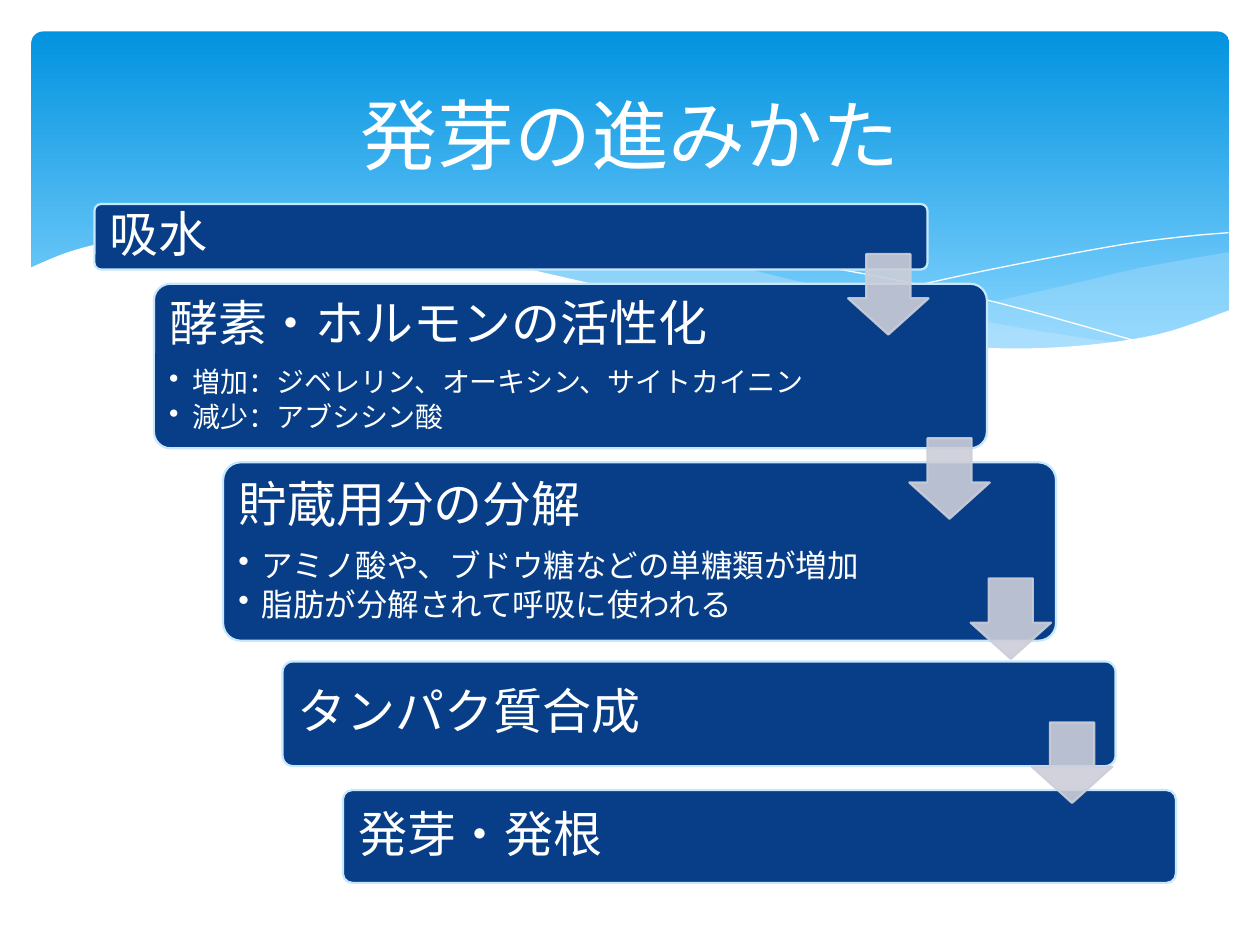
from pptx import Presentation
from pptx.dml.color import RGBColor
from pptx.enum.shapes import MSO_SHAPE as Kind
from pptx.enum.text import MSO_ANCHOR as Anchor, PP_ALIGN as Align
from pptx.oxml.ns import qn
from pptx.util import Pt
from lxml.etree import SubElement as Sub


def rgb(code):
    return RGBColor.from_string(code)


def curve(*knots, steps=6):
    """Points of a smooth line through the knots (Catmull-Rom)."""
    ends = [knots[0], *knots, knots[-1]]
    dots = []
    for a, b, c, d in zip(ends, ends[1:], ends[2:], ends[3:]):
        for n in range(steps):
            t = n / steps
            dots.append(tuple(
                q + t / 2 * (r - p + t * (2 * p - 5 * q + 4 * r - s
                                          + t * (3 * (q - r) + s - p)))
                for p, q, r, s in zip(a, b, c, d)))
    return dots + [knots[-1]]


class Deck:
    font, white, navy, pale, gray = "Calibri", "FFFFFF", "073E87", "C6E7FC", "CCCED9"
    sky = (("0293E0", 0), ("83D3FE", 0.9))
    inset = 8.64

    def __init__(self):
        self.prs = Presentation()
        self.prs.slide_width, self.prs.slide_height = Pt(720), Pt(540)
        self.slide = self.prs.slides.add_slide(self.prs.slide_layouts[5])
        self.shapes = self.slide.shapes

    def paint(self, fill, color, alpha=100):
        fill.solid()
        fill.fore_color.rgb = rgb(color)
        if alpha < 100:
            tint = fill._xPr.find(qn("a:solidFill"))[0]
            Sub(tint, qn("a:alpha")).set("val", str(alpha * 1000))

    def shape(self, kind, box, *adj):
        item = self.shapes.add_shape(kind, *map(Pt, box))
        item.shadow.inherit = False
        for i, val in enumerate(adj):
            item.adjustments[i] = val
        return item

    def edge(self, item, color, width, alpha=100):
        item.line.width = Pt(width)
        self.paint(item.line.fill, color, alpha)

    def banner(self, box):
        item = self.shape(Kind.ROUNDED_RECTANGLE, box, 0.034)
        item.fill.gradient()
        item.fill.gradient_angle = 270
        for stop, (color, place) in zip(item.fill.gradient_stops, self.sky):
            stop.color.rgb, stop.position = rgb(color), place
        item.line.fill.background()

    def trace(self, dots, close):
        dots = [(Pt(x), Pt(y)) for x, y in dots]
        pen = self.shapes.build_freeform(*dots[0])
        pen.add_line_segments(dots[1:], close=close)
        item = pen.convert_to_shape()
        item.shadow.inherit = False
        return item

    def wave(self, dots, color, alpha=100):
        item = self.trace(dots, True)
        self.paint(item.fill, color, alpha)
        item.line.fill.background()

    def thread(self, dots):
        item = self.trace(dots, False)
        item.fill.background()
        self.edge(item, self.white, 0)

    def label(self, par, text, size):
        par.text = text
        par.font.size, par.font.name = Pt(size), self.font
        par.font.color.rgb = rgb(self.white)

    def bullet(self, par):
        props = par._p.get_or_add_pPr()
        props.set("marL", str(Pt(13.5)))
        props.set("indent", str(-Pt(13.5)))
        dot = Sub(props, qn("a:buChar"))
        dot.set("char", "•")
        # The default run style must follow the bullet
        props.append(props.find(qn("a:defRPr")))

    def card(self, box, head, size=0, items=()):
        item = self.shape(Kind.ROUNDED_RECTANGLE, box, 0.1)
        self.paint(item.fill, self.navy)
        self.edge(item, self.pale, 1.25)
        left, top, _, high = box
        frame = self.shapes.add_textbox(*map(Pt, (left, top, 394, high))).text_frame
        frame.word_wrap, frame.vertical_anchor = True, Anchor.MIDDLE
        frame.margin_left = frame.margin_right = Pt(self.inset)
        frame.margin_top = frame.margin_bottom = Pt(self.inset)
        par = frame.paragraphs[0]
        self.label(par, head, 28)
        par.line_spacing, par.space_after = 0.9, Pt(9.8)
        for text in items:
            par = frame.add_paragraph()
            self.label(par, text, size)
            par.line_spacing, par.space_after = 0.9, Pt(size * 0.15)
            self.bullet(par)

    def arrow(self, left, top):
        item = self.shape(Kind.DOWN_ARROW, (left, top, 46, 46), 0.55, 0.45)
        self.paint(item.fill, self.gray, 90)
        self.edge(item, self.gray, 1.25, 90)

    def title(self, text, box):
        item = self.shapes.title
        item.left, item.top, item.width, item.height = map(Pt, box)
        item.text_frame.vertical_anchor = Anchor.MIDDLE
        par = item.text_frame.paragraphs[0]
        self.label(par, text, 44)
        par.alignment = Align.CENTER
        # Bring the title in front of the banner
        self.shapes._spTree.append(item._element)


deck = Deck()

# Sky banner with waves
deck.banner((18, 18, 684.5, 194.5))
deck.wave(
    curve((702.5, 144), (652, 153), (620, 160.5), (561, 174), (508, 185), (476, 191))
    + curve((476, 191), (518, 196.5), (562, 199.4), (608, 199.4), (646, 194.4),
            (678, 186.5), (702.5, 178)),
    deck.pale, 29)
deck.wave(
    curve((643, 196.6), (581, 187), (508, 173), (453, 160), (400, 147.6),
          (352, 139.7), (302, 134.6), (248, 134), (206, 137.5))
    + curve((206, 137.5), (261, 146), (323, 160), (408, 178.6), (479, 191.5),
            (548, 199), (596, 200), (643, 196.6)),
    deck.pale, 40)
deck.thread(curve((222.5, 140.4), (247.5, 137), (289, 134.6), (352, 137),
                  (419, 144), (500, 157.7), (572, 173.5), (653, 196)))
deck.thread(curve((441, 185), (500, 169), (559, 155.5), (634, 141),
                  (675, 135.4), (702, 133)))
deck.wave(
    curve((703.4, 177), (662, 191), (612, 198), (560, 198.7), (495, 193),
          (417, 180), (322, 158.4), (245, 141.5), (180, 134), (127, 132.5),
          (76, 136), (42.5, 143), (16.5, 153.4))
    + [(16.5, 237), (703.4, 237)],
    deck.white)

# Steps: left, top, height, heading, then size and text of the list
steps = (
    (54, 116.6, 37.4, "吸水"),
    (88, 162.2, 94, "酵素・ホルモンの活性化", 16,
     ("増加：ジベレリン、オーキシン、サイトカイニン", "減少：アブシシン酸")),
    (127.5, 264.2, 102, "貯蔵用分の分解", 18,
     ("アミノ酸や、ブドウ糖などの単糖類が増加", "脂肪が分解されて呼吸に使われる")),
    (161.5, 378, 59.8, "タンパク質合成"),
    (196, 451.5, 53, "発芽・発根"),
)
for left, top, high, *text in steps:
    deck.card((left, top, 476, high), *text)

# Arrows from step to step
for i, top in enumerate((145.2, 250.4, 330.5, 412.8)):
    deck.arrow(484.6 + 35 * i, top)

deck.title("発芽の進みかた", (36, 27, 648, 98.5))
deck.prs.save("out.pptx")
